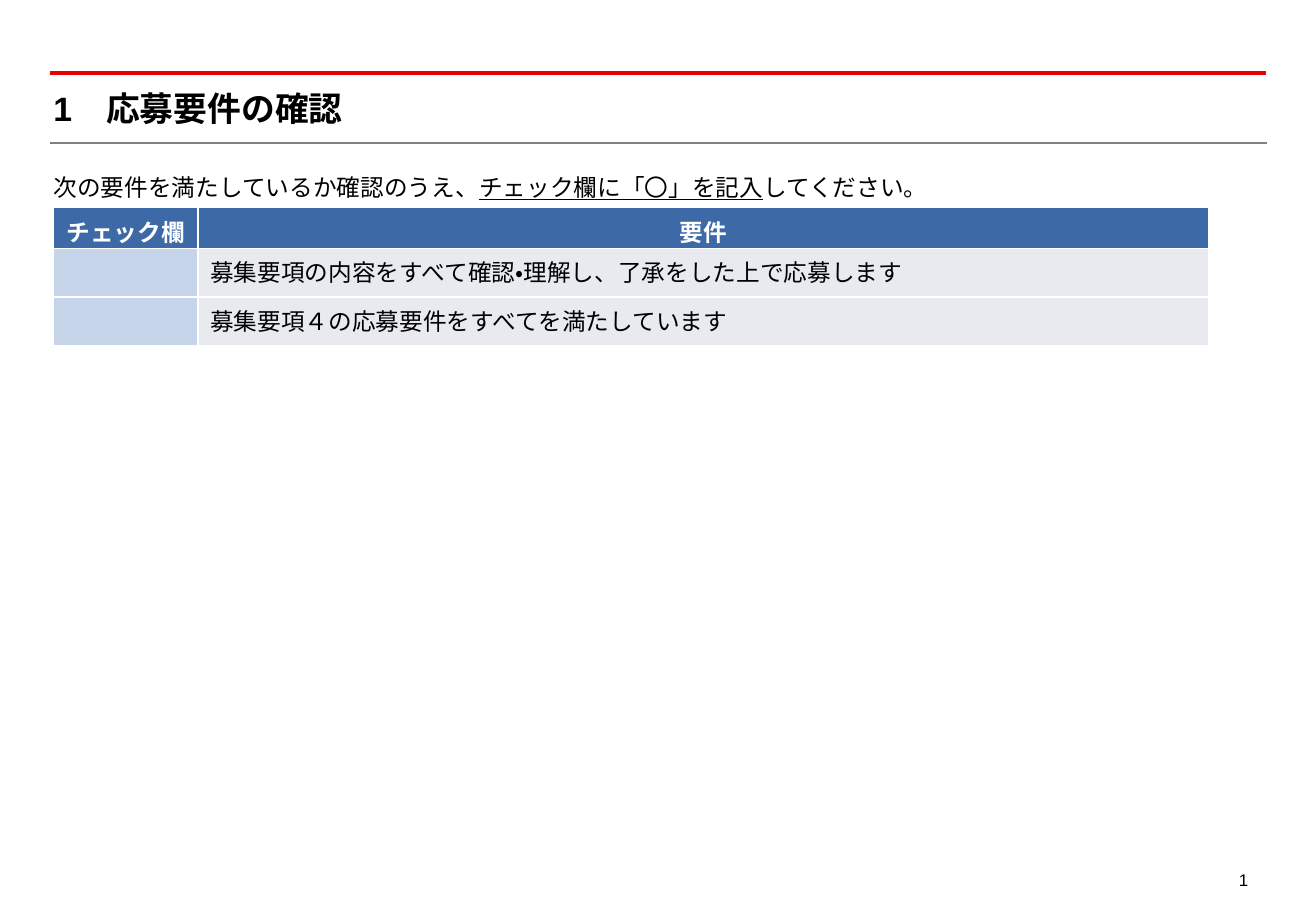
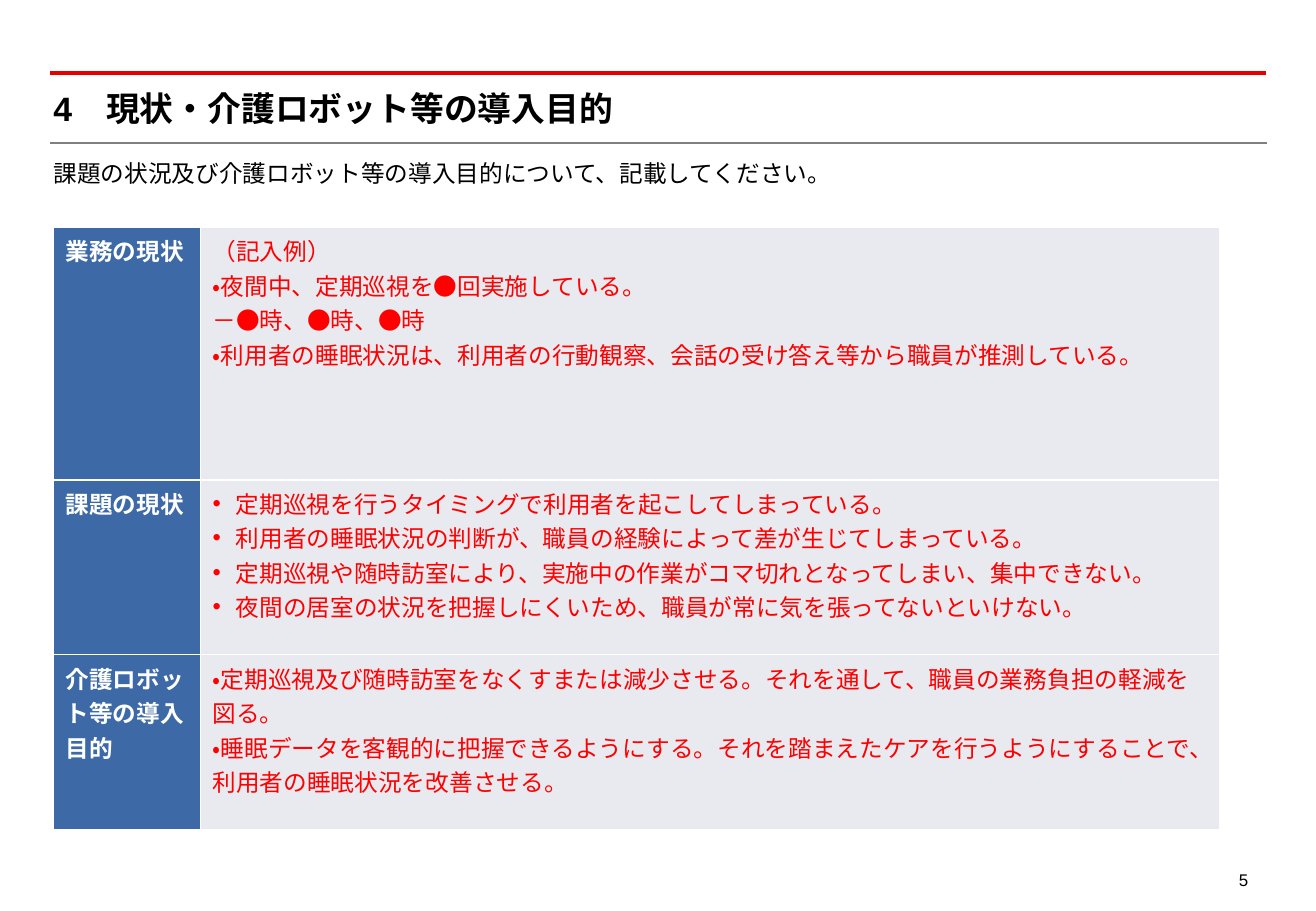
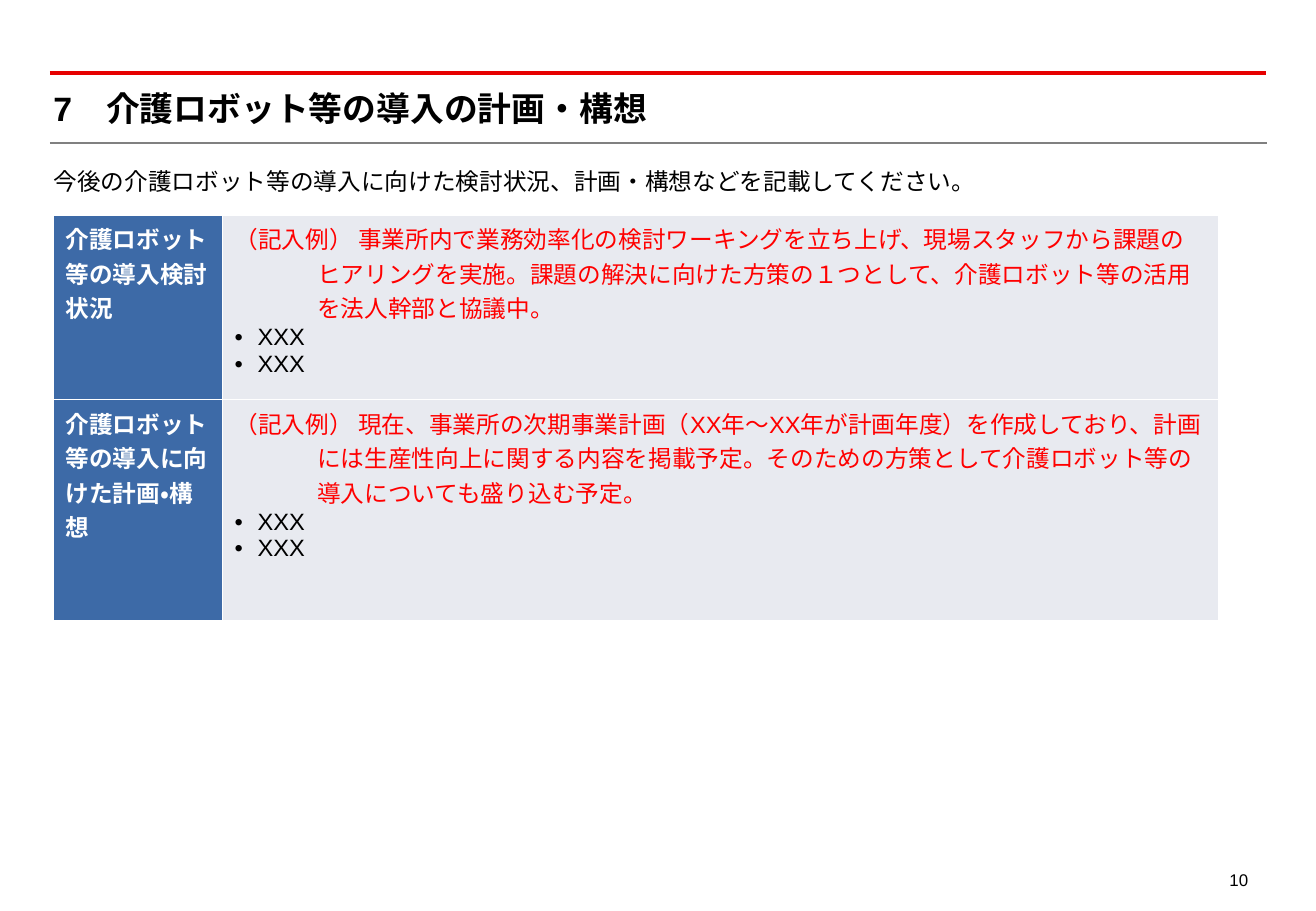
from dataclasses import dataclass

from lxml.etree import SubElement
from pptx import Presentation
from pptx.dml.color import RGBColor
from pptx.enum.lang import MSO_LANGUAGE_ID
from pptx.enum.shapes import MSO_CONNECTOR
from pptx.enum.text import MSO_ANCHOR, MSO_AUTO_SIZE, PP_ALIGN
from pptx.oxml.ns import qn
from pptx.util import Inches, Pt

BLACK = RGBColor(0x00, 0x00, 0x00)
WHITE = RGBColor(0xFF, 0xFF, 0xFF)
RED = RGBColor(0xFF, 0x00, 0x00)
RULE_RED = RGBColor(0xE6, 0x00, 0x00)
RULE_GRAY = RGBColor(0x80, 0x80, 0x80)
HEADER_BLUE = RGBColor(0x3D, 0x6A, 0xA7)
CHECK_BLUE = RGBColor(0xC6, 0xD5, 0xE9)
CELL_GRAY = RGBColor(0xE8, 0xEA, 0xF0)

FONT = "Arial"
BODY_SIZE = 14
LEFT = 0.44
CONTENT_WIDTH = 9.91
TITLE_ONLY = 5


@dataclass
class Line:
    text: str
    color: RGBColor = RED
    bold: bool = False
    align: PP_ALIGN = PP_ALIGN.LEFT
    hanging: float = 0
    bullet: bool = False


def heading(text, align=PP_ALIGN.LEFT):
    return [Line(text, WHITE, True, align)]


def bullets(texts, color):
    return [Line(text, color, hanging=0.19, bullet=True) for text in texts]


def example(text):
    return [Line(text, hanging=0.68)] + bullets(["XXX", "XXX"], BLACK)


def style_paragraph(para, size, color, bold=False, align=PP_ALIGN.LEFT):
    para.alignment = align
    font = para.font
    font.name = FONT
    font.size = Pt(size)
    font.bold = bold
    font.color.rgb = color
    font.language_id = MSO_LANGUAGE_ID.JAPANESE


def set_east_asian_font(para):
    defaults = para._p.get_or_add_pPr().find(qn("a:defRPr"))
    SubElement(defaults, qn("a:ea")).set("typeface", FONT)


def indent_paragraph(para, hanging, bullet):
    properties = para._p.get_or_add_pPr()
    properties.set("marL", str(Inches(hanging)))
    properties.set("indent", str(-Inches(hanging)))
    if bullet:
        mark_font = properties.makeelement(qn("a:buFont"), {"typeface": FONT})
        mark = properties.makeelement(qn("a:buChar"), {"char": "•"})
        properties.insert(0, mark_font)
        properties.insert(1, mark)


def clear_margins(frame):
    frame.margin_left = frame.margin_right = 0
    frame.margin_top = frame.margin_bottom = 0
    frame.word_wrap = True


def add_rule(page, right, top, color, width):
    rule = page.shapes.add_connector(
        MSO_CONNECTOR.STRAIGHT, Inches(0.41), Inches(top), Inches(right), Inches(top))
    rule.line.color.rgb = color
    rule.line.width = Pt(width)
    SubElement(rule._element.spPr, qn("a:effectLst"))


def add_page_number(page, number):
    box = page.shapes.add_textbox(Inches(9.93), Inches(7.08), Inches(0.44), Inches(0.28))
    box.text_frame.word_wrap = True
    para = box.text_frame.paragraphs[0]
    para.text = str(number)
    para.line_spacing = 1.2
    style_paragraph(para, 10, BLACK, align=PP_ALIGN.RIGHT)


def add_title(page, text):
    title = page.shapes.title
    title.left, title.top = Inches(LEFT), Inches(0.72)
    title.width, title.height = Inches(CONTENT_WIDTH), Inches(0.34)
    frame = title.text_frame
    clear_margins(frame)
    frame.auto_size = MSO_AUTO_SIZE.NONE
    frame.vertical_anchor = MSO_ANCHOR.MIDDLE
    frame.text = text
    style_paragraph(frame.paragraphs[0], 20, BLACK, True)
    set_east_asian_font(frame.paragraphs[0])


def add_page(deck, title, number):
    page = deck.slides.add_slide(deck.slide_layouts[TITLE_ONLY])
    add_rule(page, 10.42, 0.6, RULE_RED, 2)
    add_rule(page, 10.43, 1.18, RULE_GRAY, 1.25)
    add_title(page, title)
    add_page_number(page, number)
    return page


def add_lead(page, top, *parts):
    box = page.shapes.add_textbox(
        Inches(LEFT), Inches(top), Inches(CONTENT_WIDTH), Inches(0.25))
    clear_margins(box.text_frame)
    para = box.text_frame.paragraphs[0]
    para.line_spacing = 1.2
    style_paragraph(para, BODY_SIZE, BLACK)
    set_east_asian_font(para)
    for text, underlined in parts:
        span = para.add_run()
        span.text = text
        if underlined:
            span.font.underline = True


def fill_cell(cell, lines, color):
    cell.fill.solid()
    cell.fill.fore_color.rgb = color
    frame = cell.text_frame
    for index, line in enumerate(lines):
        para = frame.add_paragraph() if index else frame.paragraphs[0]
        para.text = line.text
        style_paragraph(para, BODY_SIZE, line.color, line.bold, line.align)
        if line.hanging:
            indent_paragraph(para, line.hanging, line.bullet)


def add_form(page, top, widths, heights, rows, label_color=HEADER_BLUE, header=False):
    frame = page.shapes.add_table(
        len(rows), len(widths), Inches(LEFT), Inches(top),
        Inches(sum(widths)), Inches(sum(heights)))
    table = frame.table
    table.first_row = header
    table.horz_banding = False
    for column, width in zip(table.columns, widths):
        column.width = Inches(width)
    for index, (height, (label, content)) in enumerate(zip(heights, rows)):
        table.rows[index].height = Inches(height)
        is_header = header and index == 0
        fill_cell(table.cell(index, 0), label, HEADER_BLUE if is_header else label_color)
        fill_cell(table.cell(index, 1), content, HEADER_BLUE if is_header else CELL_GRAY)


def build_requirements(deck):
    page = add_page(deck, "1　応募要件の確認", 1)
    add_lead(page, 1.38,
             ("次の要件を満たしているか確認のうえ、", False),
             ("チェック欄に「〇」を記入", True),
             ("してください。", False))
    requirements = [
        "募集要項の内容をすべて確認・理解し、了承をした上で応募します",
        "募集要項４の応募要件をすべてを満たしています",
    ]
    rows = [(heading("チェック欄", PP_ALIGN.CENTER), heading("要件", PP_ALIGN.CENTER))]
    rows += [([], [Line(text, BLACK)]) for text in requirements]
    add_form(page, 1.71, [1.19, 8.32], [0.33, 0.4, 0.4], rows, CHECK_BLUE, True)


def build_purpose(deck):
    page = add_page(deck, "4　現状・介護ロボット等の導入目的", 5)
    situation = [
        "（記入例）",
        "・夜間中、定期巡視を●回実施している。",
        "－●時、●時、●時",
        "・利用者の睡眠状況は、利用者の行動観察、会話の受け答え等から職員が推測している。",
    ]
    issues = [
        "定期巡視を行うタイミングで利用者を起こしてしまっている。",
        "利用者の睡眠状況の判断が、職員の経験によって差が生じてしまっている。",
        "定期巡視や随時訪室により、実施中の作業がコマ切れとなってしまい、集中できない。",
        "夜間の居室の状況を把握しにくいため、職員が常に気を張ってないといけない。",
    ]
    purposes = [
        "・定期巡視及び随時訪室をなくすまたは減少させる。それを通して、職員の業務負担の軽減を図る。",
        "・睡眠データを客観的に把握できるようにする。それを踏まえたケアを行うようにすることで、"
        "利用者の睡眠状況を改善させる。",
    ]
    add_form(page, 1.87, [1.21, 8.39], [2.08, 1.44, 1.44], [
        (heading("業務の現状"), [Line(text) for text in situation]),
        (heading("課題の現状"), bullets(issues, RED)),
        (heading("介護ロボット等の導入目的"), [Line(text) for text in purposes]),
    ])
    add_lead(page, 1.26,
             ("課題の状況及び介護ロボット等の導入目的について、記載してください。", False))


def build_plan(deck):
    page = add_page(deck, "7　介護ロボット等の導入の計画・構想", 10)
    add_lead(page, 1.33,
             ("今後の介護ロボット等の導入に向けた検討状況、計画・構想などを記載してください。", False))
    add_form(page, 1.77, [1.39, 8.2], [1.52, 1.82], [
        (heading("介護ロボット等の導入検討状況"), example(
            "（記入例） 事業所内で業務効率化の検討ワーキングを立ち上げ、現場スタッフから課題の"
            "ヒアリングを実施。課題の解決に向けた方策の１つとして、介護ロボット等の活用を"
            "法人幹部と協議中。")),
        (heading("介護ロボット等の導入に向けた計画・構想"), example(
            "（記入例） 現在、事業所の次期事業計画（XX年～XX年が計画年度）を作成しており、"
            "計画には生産性向上に関する内容を掲載予定。そのための方策として介護ロボット等の"
            "導入についても盛り込む予定。")),
    ])


def main():
    deck = Presentation()
    deck.slide_width = Inches(10.83)
    deck.slide_height = Inches(7.5)
    build_requirements(deck)
    build_purpose(deck)
    build_plan(deck)
    deck.save("out.pptx")


if __name__ == "__main__":
    main()
